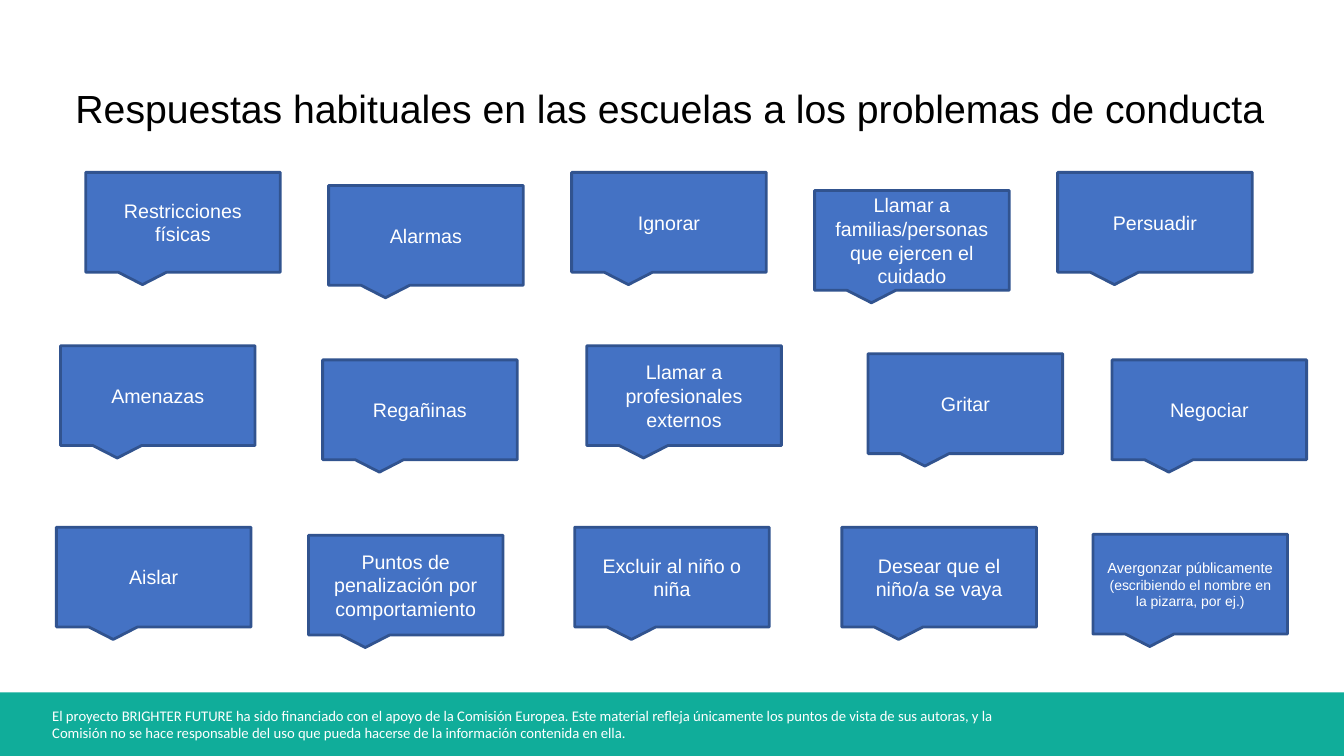
from pptx import Presentation
from pptx.dml.color import RGBColor
from pptx.enum import shapes, text
from pptx.util import Inches, Pt

TITLE = "Respuestas habituales en las escuelas a los problemas de conducta"
FUNDING = (
    "El proyecto BRIGHTER FUTURE ha sido financiado con el apoyo de la Comisión Europea. "
    "Este material refleja únicamente los puntos de vista de sus autoras, y la Comisión "
    "no se hace responsable del uso que pueda hacerse de la información contenida en ella."
)
SHAMING = ("Avergonzar públicamente", "(escribiendo el nombre en la pizarra, por ej.)")

# Each row: its top, then (left, drop below the row top, wording)
RESPONSES = [
    (1.71, [
        (0.85, 0, "Restricciones físicas"),
        (3.26, 0.13, "Alarmas"),
        (5.67, 0, "Ignorar"),
        (8.08, 0.18, "Llamar a familias/personas que ejercen el cuidado"),
        (10.49, 0, "Persuadir"),
    ]),
    (3.43, [
        (0.6, 0, "Amenazas"),
        (3.2, 0.14, "Regañinas"),
        (5.82, 0, "Llamar a profesionales externos"),
        (8.61, 0.08, "Gritar"),
        (11.03, 0.14, "Negociar"),
    ]),
    (5.23, [
        (0.56, 0, "Aislar"),
        (3.06, 0.08, "Puntos de penalización por comportamiento"),
        (5.7, 0, "Excluir al niño o niña"),
        (8.35, 0, "Desear que el niño/a se vaya"),
        (10.84, 0.07, SHAMING),
    ]),
]

THEME = {
    "band": RGBColor.from_string("10AD9A"),
    "callout": RGBColor.from_string("4472C4"),
    "outline": RGBColor.from_string("31538F"),
    "title": {"name": "Arial", "size": Pt(28), "color": RGBColor(0, 0, 0)},
    "label": {"name": "Arial", "size": Pt(14), "color": RGBColor(255, 255, 255)},
    "funding": {"name": "Calibri", "size": Pt(10.5), "color": RGBColor(255, 255, 255)},
    "shaming_sizes": (Pt(10.5), Pt(10)),
}
PAGE_WIDTH, PAGE_HEIGHT = 13.33, 7.5
BAND_TOP = 6.87
CALLOUT_SIZE = (1.93, 0.99)
CALLOUT_TIP = (-0.208, 0.625)


def add_span(para, wording, style):
    span = para.add_run()
    span.text = wording
    for name, value in style.items():
        if name == "color":
            span.font.color.rgb = value
        else:
            setattr(span.font, name, value)


def add_text(page, place, wording, style):
    box = page.shapes.add_textbox(*map(Inches, place))
    box.text_frame.word_wrap = True
    box.text_frame.auto_size = text.MSO_AUTO_SIZE.SHAPE_TO_FIT_TEXT
    add_span(box.text_frame.paragraphs[0], wording, style)


def add_filled(page, kind, place, fill):
    shape = page.shapes.add_shape(kind, *map(Inches, place))
    shape.shadow.inherit = False
    shape.fill.solid()
    shape.fill.fore_color.rgb = fill
    return shape


def add_callout(page, left, top, wording):
    kind = shapes.MSO_SHAPE.RECTANGULAR_CALLOUT
    callout = add_filled(page, kind, (left, top, *CALLOUT_SIZE), THEME["callout"])
    callout.line.color.rgb = THEME["outline"]
    callout.line.width = Pt(2)
    for index, value in enumerate(CALLOUT_TIP):
        callout.adjustments[index] = value
    frame = callout.text_frame
    frame.word_wrap = True
    frame.vertical_anchor = text.MSO_ANCHOR.MIDDLE
    para = frame.paragraphs[0]
    para.alignment = text.PP_ALIGN.CENTER
    if isinstance(wording, str):
        add_span(para, wording, THEME["label"])
        return
    for index, (line, size) in enumerate(zip(wording, THEME["shaming_sizes"])):
        if index:
            para.add_line_break()
        add_span(para, line, {**THEME["label"], "size": size})


def main():
    deck = Presentation()
    deck.slide_width, deck.slide_height = Inches(PAGE_WIDTH), Inches(PAGE_HEIGHT)
    page = deck.slides.add_slide(deck.slide_layouts[6])

    band_place = (0, BAND_TOP, PAGE_WIDTH, PAGE_HEIGHT - BAND_TOP)
    band = add_filled(page, shapes.MSO_SHAPE.RECTANGLE, band_place, THEME["band"])
    band.line.fill.background()
    add_text(page, (0.42, 6.96, 10, 0.45), FUNDING, THEME["funding"])

    for row_top, row in RESPONSES:
        for left, drop, wording in row:
            add_callout(page, left, row_top + drop, wording)
    add_text(page, (0.65, 0.79, 12.12, 0.57), TITLE, THEME["title"])

    deck.save("out.pptx")


if __name__ == "__main__":
    main()
